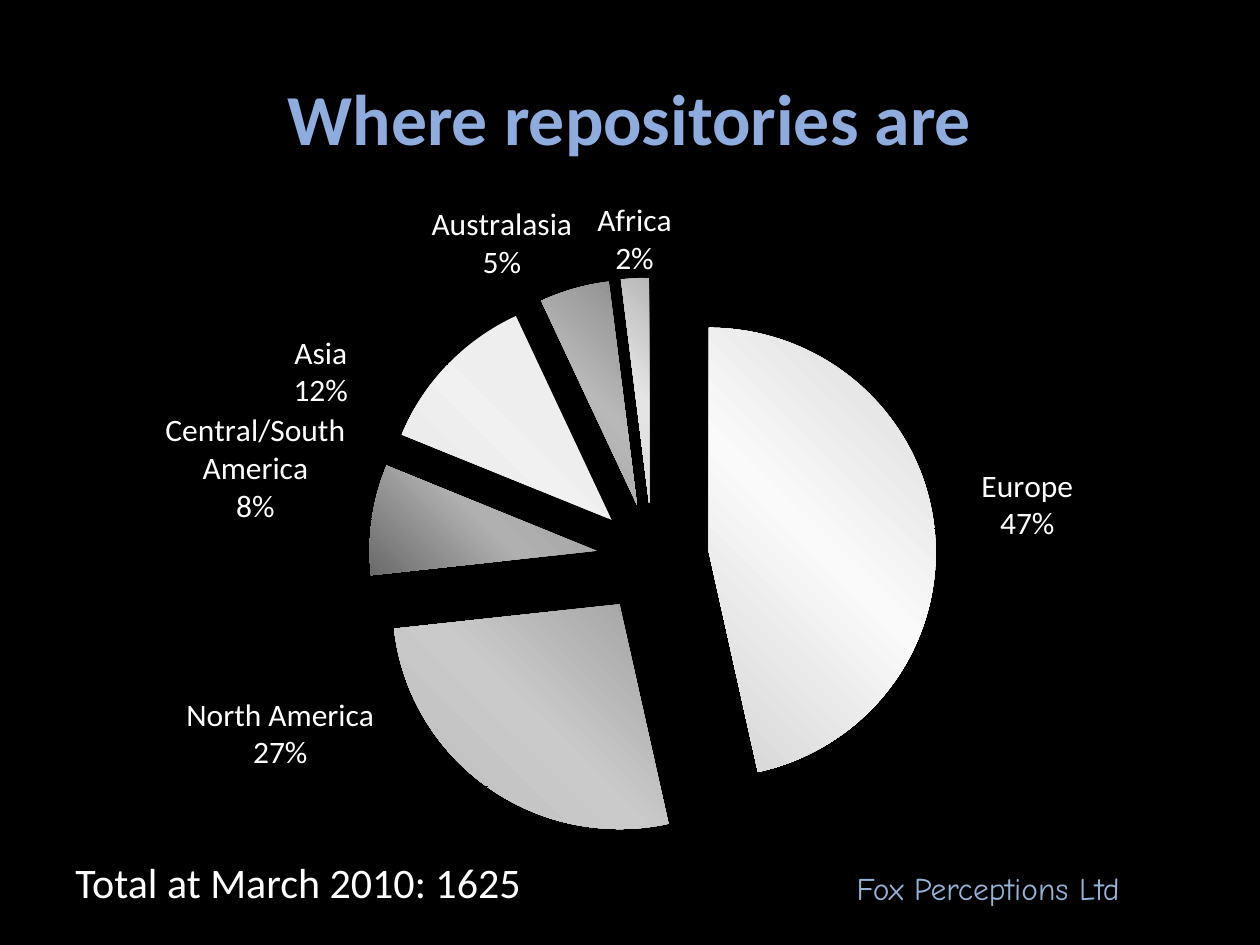
from copy import deepcopy

from pptx import Presentation
from pptx.chart.data import CategoryChartData
from pptx.dml.color import RGBColor
from pptx.enum.chart import XL_CHART_TYPE as ChartType, XL_LABEL_POSITION as LabelPosition
from pptx.enum.text import MSO_ANCHOR as Anchor, PP_ALIGN as Align
from pptx.oxml import parse_xml
from pptx.oxml.ns import nsdecls, qn
from pptx.util import Pt

COLORS = {"background": "000000", "title": "8FACDE", "text": "FFFFFF", "footer": "95B3D7"}
REGIONS = {
    "Europe": (47, ("D8D8D8", "FAFAFA", "D4D4D4")),
    "North America": (27, ("A0A0A0", "CACACA", "BCBCBC")),
    "Central/South America": (8, ("A0A0A0", "B0B0B0", "6A6A6A")),
    "Asia": (12, ("EEEEEE", "F1F1F1", "E6E6E6")),
    "Australasia": (5, ("8C8C8C", "B8B8B8", "A0A0A0")),
    "Africa": (2, ("B8B8B8", "E4E4E4", "DADADA")),
}
PLOT_LAYOUT = {"x": 0.27, "y": 0.11, "w": 0.5, "h": 0.85}
LABEL_SHIFTS = [(Pt(23), Pt(9)), (Pt(-62), Pt(-56)), (Pt(-11), Pt(4)), (Pt(-54), Pt(29))]


def set_attributes(target, values):
    for name, value in values.items():
        setattr(target, name, value)


def format_font(font, color, values):
    set_attributes(font, values)
    font.color.rgb = RGBColor.from_string(COLORS[color])


def add_title(slide, left, top, width, height):
    title = slide.shapes.title
    set_attributes(title, {"left": left, "top": top, "width": width, "height": height})
    title.text_frame.vertical_anchor = Anchor.MIDDLE
    paragraph = title.text_frame.paragraphs[0]
    paragraph.text = "Where repositories are"
    paragraph.alignment = Align.CENTER
    format_font(paragraph.runs[0].font, "title", {"name": "Calibri", "size": Pt(41), "bold": True})


def shade_slices(series):
    for index, (_, shades) in enumerate(REGIONS.values()):
        fill = series.points[index].format.fill
        fill.gradient()
        fill.gradient_angle = 225
        stop_list = list(series._element.iter(qn("a:gsLst")))[-1]
        stop_list.append(deepcopy(stop_list[0]))
        for stop, position, shade in zip(fill.gradient_stops, (0, 0.5, 1), shades):
            stop.position = position
            stop.color.rgb = RGBColor.from_string(shade)


def shift_labels(label_list, width, height):
    shared = [child for child in label_list if child.tag != qn("c:showLeaderLines")]
    for index, (right, down) in enumerate(LABEL_SHIFTS):
        label = parse_xml(
            f'<c:dLbl {nsdecls("c")}><c:idx val="{index}"/><c:layout><c:manualLayout>'
            f'<c:x val="{right / width:.3f}"/><c:y val="{down / height:.3f}"/>'
            "</c:manualLayout></c:layout></c:dLbl>")
        label.extend(deepcopy(child) for child in shared)
        label_list.insert(index, label)


def add_region_pie(slide, left, top, width, height):
    data = CategoryChartData()
    data.categories = list(REGIONS)
    data.add_series("Series 1", [share for share, _ in REGIONS.values()])
    chart = slide.shapes.add_chart(ChartType.PIE, left, top, width, height, data).chart
    set_attributes(chart, {"has_legend": False, "has_title": False})
    format_font(chart.font, "text", {"name": "Calibri", "size": Pt(18)})
    plot = chart.plots[0]
    plot.vary_by_categories = True
    series = plot.series[0]
    shade_slices(series)
    first_point = series._element.find(qn("c:dPt"))
    first_point.addprevious(parse_xml(f'<c:explosion {nsdecls("c")} val="25"/>'))

    labels = series.data_labels
    set_attributes(labels, {
        "show_value": False, "show_category_name": True,
        "show_percentage": True, "position": LabelPosition.OUTSIDE_END,
    })
    format_font(labels.font, "text", {"name": "Calibri", "size": Pt(18)})
    separator = parse_xml(f'<c:separator {nsdecls("c")}>\n</c:separator>')
    labels._element.find(qn("c:showBubbleSize")).addnext(separator)
    shift_labels(labels._element, width, height)

    area = chart._chartSpace.find(".//" + qn("c:plotArea"))
    for old_layout in area.findall(qn("c:layout")):
        area.remove(old_layout)
    modes = '<c:xMode val="edge"/><c:yMode val="edge"/>'
    sizes = "".join(f'<c:{name} val="{value}"/>' for name, value in PLOT_LAYOUT.items())
    area.insert(0, parse_xml(
        f'<c:layout {nsdecls("c")}><c:manualLayout><c:layoutTarget val="inner"/>'
        f"{modes}{sizes}</c:manualLayout></c:layout>"))


def add_note(slide, left, top, width, height, text, color, font_values):
    frame = slide.shapes.add_textbox(left, top, width, height).text_frame
    frame.word_wrap = True
    paragraph = frame.paragraphs[0]
    paragraph.text = text
    format_font(paragraph.runs[0].font, color, font_values)


def main():
    presentation = Presentation()
    set_attributes(presentation, {"slide_width": Pt(720), "slide_height": Pt(540)})
    slide = presentation.slides.add_slide(presentation.slide_layouts[5])
    slide.background.fill.solid()
    slide.background.fill.fore_color.rgb = RGBColor.from_string(COLORS["background"])
    add_title(slide, Pt(36), Pt(21.6), Pt(648), Pt(90))
    add_region_pie(slide, Pt(36), Pt(111.6), Pt(648), Pt(385.2))
    add_note(slide, Pt(482.4), Pt(493.2), Pt(221), Pt(28.8), "Fox Perceptions Ltd",
             "footer", {"name": "Comic Neue", "size": Pt(18)})
    add_note(slide, Pt(36), Pt(486), Pt(365.8), Pt(36), "Total at March 2010: 1625",
             "text", {"name": "Calibri", "size": Pt(24)})
    presentation.save("out.pptx")


if __name__ == "__main__":
    main()
